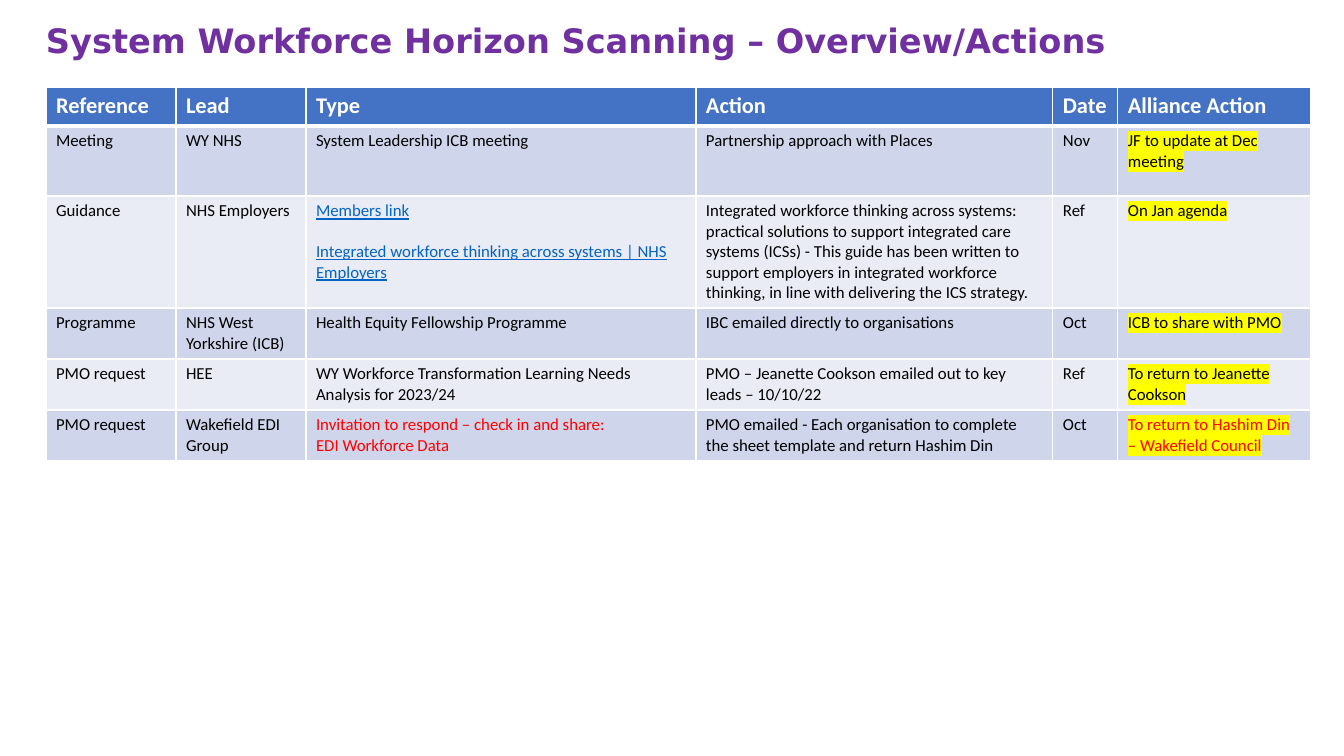
from lxml import etree
from pptx import Presentation
from pptx.dml.color import RGBColor
from pptx.enum.text import MSO_ANCHOR
from pptx.oxml.ns import qn
from pptx.util import Emu, Pt

MIDDLE = MSO_ANCHOR.MIDDLE
EMU_PER_PX = 914400 / 100.8

PURPLE, BLUE, WHITE, BLACK = "7030A0", "4472C4", "FFFFFF", "000000"
RED, LINK, YELLOW = "FF0000", "0563C1", "FFFF00"
BANDS = ("CFD5EA", "E9EBF5")

COLUMN_WIDTHS = (130, 130, 390, 357, 65, 193)
ROW_HEIGHTS = (39, 70, 112, 51, 51, 51)
HEADINGS = ("Reference", "Lead", "Type", "Action", "Date", "Alliance Action")
LINKS = ("Members link\n"
         "Integrated workforce thinking across systems | NHS Employers")
INVITATION = "Invitation to respond – check in and share:\nEDI Workforce Data"
RETURN_DATA = "To return to Hashim Din – Wakefield Council"
ACTIONS = (
    ("Meeting", "WY NHS", "System Leadership ICB meeting",
     "Partnership approach with Places", "Nov", "JF to update at Dec meeting"),
    ("Guidance", "NHS Employers", LINKS,
     "Integrated workforce thinking across systems: practical solutions to "
     "support integrated care systems (ICSs) - This guide has been written to "
     "support employers in integrated workforce thinking, in line with "
     "delivering the ICS strategy.", "Ref", "On Jan agenda"),
    ("Programme", "NHS West Yorkshire (ICB)",
     "Health Equity Fellowship Programme",
     "IBC emailed directly to organisations", "Oct", "ICB to share with PMO"),
    ("PMO request", "HEE",
     "WY Workforce Transformation Learning Needs Analysis for 2023/24",
     "PMO – Jeanette Cookson emailed out to key leads – 10/10/22", "Ref",
     "To return to Jeanette Cookson"),
    ("PMO request", "Wakefield EDI Group", INVITATION,
     "PMO emailed - Each organisation to complete the sheet template and "
     "return Hashim Din", "Oct", RETURN_DATA),
)
TEXT_COLOURS = {LINKS: LINK, INVITATION: RED, RETURN_DATA: RED}


def px(length):
    return Emu(round(length * EMU_PER_PX))


def colour(value):
    return RGBColor.from_string(value)


def style_text(frame, font_name, size, text_colour, bold=False):
    for para in frame.paragraphs:
        for span in para.runs:
            span.font.name = font_name
            span.font.size = Pt(size)
            span.font.bold = bold
            span.font.color.rgb = colour(text_colour)


def highlight(frame, value):
    for para in frame.paragraphs:
        for span in para.runs:
            mark = etree.Element(qn("a:highlight"))
            etree.SubElement(mark, qn("a:srgbClr"), val=value)
            span.font.fill._xPr.find(qn("a:solidFill")).addnext(mark)


def set_borders(cell, bottom_width):
    """Draw white cell borders, 1 pt except for the bottom one."""
    properties = cell._tc.get_or_add_tcPr()
    for index, side in enumerate("LRTB"):
        width = Pt(bottom_width if side == "B" else 1)
        line = etree.Element(qn(f"a:ln{side}"), w=str(width))
        fill = etree.SubElement(line, qn("a:solidFill"))
        etree.SubElement(fill, qn("a:srgbClr"), val=WHITE)
        properties.insert(index, line)


def fill_cell(cell, text, fill, size, text_colour, bold=False, bottom_width=1):
    cell.text_frame.text = text
    cell.fill.solid()
    cell.fill.fore_color.rgb = colour(fill)
    style_text(cell.text_frame, "Calibri", size, text_colour, bold)
    set_borders(cell, bottom_width)


def style_links(frame):
    for para in frame.paragraphs:
        for span in para.runs:
            span.font.underline = True
    frame.paragraphs[1].space_before = Pt(14.6)


def add_title(page, text):
    box = page.shapes.add_textbox(px(46), px(20), px(1200), px(40))
    frame = box.text_frame
    frame.word_wrap = True
    frame.vertical_anchor = MIDDLE
    frame.margin_left = frame.margin_right = 0
    frame.margin_top = frame.margin_bottom = 0
    frame.text = text
    style_text(frame, "DejaVu Sans", 24, PURPLE, bold=True)


def add_action_table(page):
    table = page.shapes.add_table(
        len(ROW_HEIGHTS), len(COLUMN_WIDTHS), px(46), px(87),
        px(sum(COLUMN_WIDTHS)), px(sum(ROW_HEIGHTS))).table
    for column, width in zip(table.columns, COLUMN_WIDTHS):
        column.width = px(width)
    for row, height in zip(table.rows, ROW_HEIGHTS):
        row.height = px(height)

    for column, heading in enumerate(HEADINGS):
        fill_cell(table.cell(0, column), heading, BLUE, 16, WHITE,
                  bold=True, bottom_width=3)
    for row, action in enumerate(ACTIONS, start=1):
        for column, text in enumerate(action):
            cell = table.cell(row, column)
            fill_cell(cell, text, BANDS[(row - 1) % 2], 12,
                      TEXT_COLOURS.get(text, BLACK))
            if text == LINKS:
                style_links(cell.text_frame)
            if HEADINGS[column] == "Alliance Action":
                highlight(cell.text_frame, YELLOW)


def main():
    deck = Presentation()
    deck.slide_width, deck.slide_height = px(1344), px(756)
    page = deck.slides.add_slide(deck.slide_layouts[6])
    add_title(page, "System Workforce Horizon Scanning – Overview/Actions")
    add_action_table(page)
    deck.save("out.pptx")


if __name__ == "__main__":
    main()
